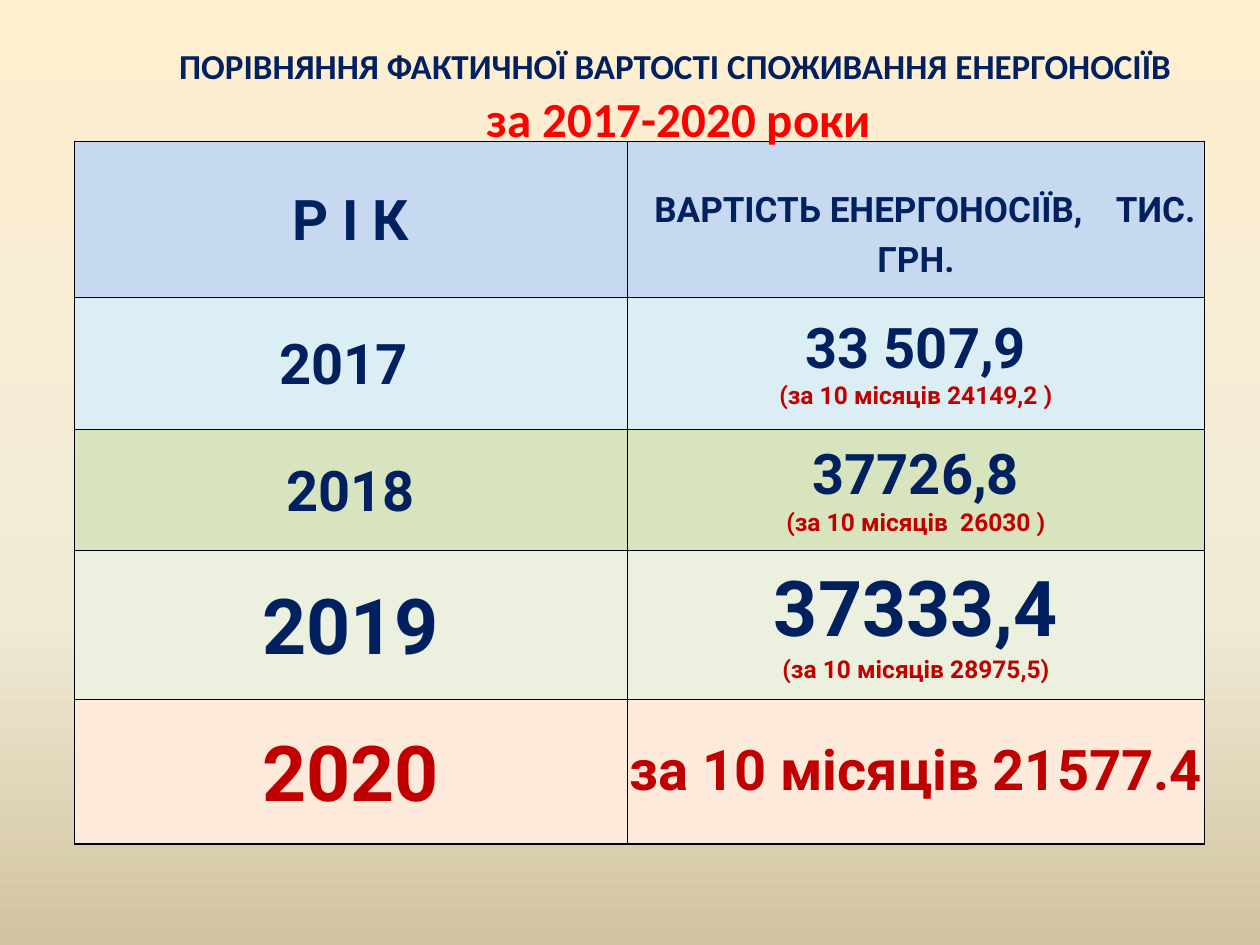
import copy

import pptx
import pptx.dml.color
import pptx.enum.text
import pptx.oxml
import pptx.oxml.ns
import pptx.util

RGBColor = pptx.dml.color.RGBColor
Inches = pptx.util.Inches
Pt = pptx.util.Pt

NAVY = RGBColor(0x00, 0x20, 0x60)
BLUE = RGBColor(0x1F, 0x49, 0x7D)
RED = RGBColor(0xFF, 0x00, 0x00)
DARK_RED = RGBColor(0xC0, 0x00, 0x00)
HEADER_FILL = RGBColor(0xC6, 0xD9, 0xF1)
BACKGROUND_STOPS = [
    (0, RGBColor(0xFF, 0xEF, 0xD1)),
    (0.65, RGBColor(0xF0, 0xEB, 0xD5)),
    (1, RGBColor(0xD1, 0xC3, 0x9F)),
]

COLUMN_WIDTHS = [4.39, 4.58]
ROW_HEIGHTS = [1.24, 1.05, 0.96, 1.18, 1.15]

# Year, size of the year, fill, colour, lines of the cost cell as (text, size, colour)
YEARS = [
    ("2017 ", 32, RGBColor(0xDB, 0xEE, 0xF4), NAVY,
     [("33 507,9", 32, NAVY), ("(за 10 місяців 24149,2 )", 14, DARK_RED)]),
    ("2018", 32, RGBColor(0xD7, 0xE4, 0xBD), NAVY,
     [("37726,8", 32, NAVY), ("(за 10 місяців  26030 )", 14, DARK_RED)]),
    ("2019", 44, RGBColor(0xEB, 0xF1, 0xDE), NAVY,
     [("37333,4", 44, NAVY), ("(за 10 місяців 28975,5)", 14, DARK_RED)]),
    ("2020", 44, RGBColor(0xFD, 0xEA, 0xDA), DARK_RED,
     [("за 10 місяців 21577.4", 32, DARK_RED)]),
]


def paint_background(slide):
    fill = slide.background.fill
    fill.gradient()
    fill.gradient_angle = 270
    stop_list = fill._fill._gradFill.gsLst
    stop_list.append(copy.deepcopy(stop_list[-1]))
    for stop, (position, color) in zip(fill.gradient_stops, BACKGROUND_STOPS):
        stop.position = position
        stop.color.rgb = color


def write_paragraphs(text_frame, paragraphs, font_name):
    """Write centred bold paragraphs, each a list of (text, size, colour) runs."""
    for index, runs in enumerate(paragraphs):
        paragraph = text_frame.paragraphs[0] if index == 0 else text_frame.add_paragraph()
        paragraph.alignment = pptx.enum.text.PP_ALIGN.CENTER
        paragraph.font.name = font_name
        paragraph.font.bold = True
        for text, size, color in runs:
            run = paragraph.add_run()
            run.text = text
            run.font.size = Pt(size)
            run.font.color.rgb = color


def set_borders(cell, widths):
    """Draw black borders; widths run left, right, top, bottom."""
    properties = cell._tc.get_or_add_tcPr()
    for index, (side, width) in enumerate(zip("LRTB", widths)):
        line = pptx.oxml.parse_xml(
            f'<a:ln{side} {pptx.oxml.ns.nsdecls("a")} w="{Pt(width)}">'
            '<a:solidFill><a:srgbClr val="000000"/></a:solidFill>'
            f'</a:ln{side}>')
        properties.insert(index, line)


def fill_cell(cell, paragraphs, color, borders):
    cell.fill.solid()
    cell.fill.fore_color.rgb = color
    cell.vertical_anchor = pptx.enum.text.MSO_ANCHOR.MIDDLE
    cell.margin_left = cell.margin_right = cell.margin_top = cell.margin_bottom = 0
    write_paragraphs(cell.text_frame, paragraphs, "Roboto")
    set_borders(cell, borders)


def add_cost_table(slide):
    table = slide.shapes.add_table(
        len(ROW_HEIGHTS), len(COLUMN_WIDTHS), Inches(0.59), Inches(1.12),
        Inches(sum(COLUMN_WIDTHS)), Inches(sum(ROW_HEIGHTS))).table
    for column, width in zip(table.columns, COLUMN_WIDTHS):
        column.width = Inches(width)
    for row, height in zip(table.rows, ROW_HEIGHTS):
        row.height = Inches(height)

    # Header; the tall spaces set the gap and the height of the line
    heading = [("ВАРТІСТЬ ЕНЕРГОНОСІЇВ,", 20, NAVY), (" ", 36, NAVY),
               (" ", 40, NAVY), ("ТИС. ГРН.", 20, NAVY)]
    rows = [([[("Р І К", 32, NAVY)]], [heading], HEADER_FILL)]
    # One row for each year
    for year, size, color, text_color, costs in YEARS:
        rows.append(([[(year, size, text_color)]], [[line] for line in costs], color))

    for index, (year, cost, color) in enumerate(rows):
        top = 0.5 if index == 0 else 1
        fill_cell(table.cell(index, 0), year, color, (0.5, 0.5, top, 1))
        fill_cell(table.cell(index, 1), cost, color, (0.5, 1, top, 1))
        paragraph = table.cell(index, 0).text_frame.paragraphs[0]
        paragraph.line_spacing = 1.07
        paragraph.space_after = Pt(8)

    # First-line indent of the cost heading
    heading_paragraph = table.cell(0, 1).text_frame.paragraphs[0]
    heading_paragraph._p.get_or_add_pPr().set("indent", str(Inches(0.14)))


def add_title(slide):
    box = slide.shapes.add_textbox(Inches(1.14), Inches(0.25), Inches(8.43), Inches(0.8))
    box.text_frame.word_wrap = True
    write_paragraphs(box.text_frame, [
        [(" ", 24, BLUE),
         ("ПОРІВНЯННЯ ФАКТИЧНОЇ ВАРТОСТІ СПОЖИВАННЯ ЕНЕРГОНОСІЇВ ", 20, NAVY)],
        [(" ", 20, NAVY), ("за 2017-2020 роки", 28, RED)],
    ], "Calibri")


def main():
    presentation = pptx.Presentation()
    presentation.slide_width = Inches(10)
    presentation.slide_height = Inches(7.5)
    slide = presentation.slides.add_slide(presentation.slide_layouts[6])
    paint_background(slide)
    add_cost_table(slide)
    add_title(slide)
    presentation.save("out.pptx")


if __name__ == "__main__":
    main()
